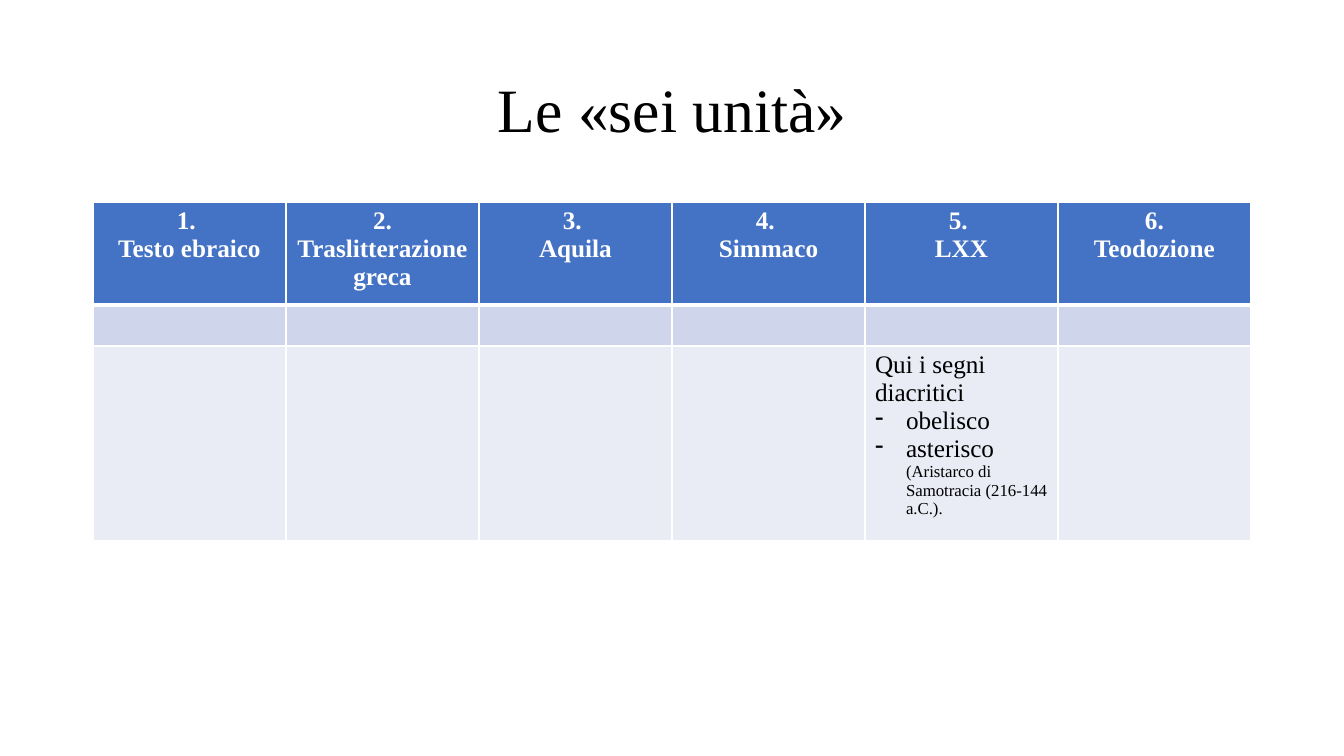
"""Build the slide on the six columns of the Hexapla."""
from lxml import etree
from pptx import Presentation
from pptx import util as u
from pptx.dml.color import RGBColor
from pptx.enum import text
from pptx.oxml.ns import qn

TITLE = "Le «sei unità»"
HEADS = [
    ("1. ", "Testo ebraico"),
    ("2.", "Traslitterazione greca"),
    ("3. ", "Aquila"),
    ("4. ", "Simmaco"),
    ("5. ", "LXX"),
    ("6.", "Teodozione"),
]
INTRO = "Qui i segni diacritici"
SIGNS = ["obelisco", "asterisco "]
NOTE = "(Aristarco di Samotracia (216-144 a.C.)."
NOTE_COL = 4

FONT = "Times New Roman"
COLORS = {"head": "4472C4", "band": "CFD5EA", "pale": "E9EBF5",
          "white": "FFFFFF", "black": "000000"}
FILLS = ["head", "band", "pale"]
WIDE, HIGH = 1344, 756
LEFT, TOP, COL = 93, 202, 193
ROWS = [103, 41, 195]
TITLE_BOX = (93, 40, 1159, 146)
INDENT = 31


def px(n):
    return u.Emu(round(n * 914400 / 100.8))


def style(run, size, color, bold=False):
    font = run.font
    font.name, font.size, font.bold = FONT, u.Pt(size), bold
    font.color.rgb = RGBColor.from_string(COLORS[color])


def border(cell, row):
    props = cell._tc.get_or_add_tcPr()
    widths = {"L": 1, "R": 1, "T": 3 if row == 1 else 1, "B": 3 if row == 0 else 1}
    for i, (side, width) in enumerate(widths.items()):
        line = etree.Element(qn("a:ln" + side), w=str(u.Pt(width)))
        fill = etree.SubElement(line, qn("a:solidFill"))
        etree.SubElement(fill, qn("a:srgbClr"), val=COLORS["white"])
        props.insert(i, line)


def dash(para):
    props = para._p.get_or_add_pPr()
    props.set("marL", str(px(INDENT)))
    props.set("indent", str(-px(INDENT)))
    etree.SubElement(props, qn("a:buFontTx"))
    etree.SubElement(props, qn("a:buChar"), char="-")


def add_title(slide):
    title = slide.shapes.title
    title.left, title.top, title.width, title.height = map(px, TITLE_BOX)
    frame = title.text_frame
    frame.text = TITLE
    frame.vertical_anchor = text.MSO_ANCHOR.MIDDLE
    para = frame.paragraphs[0]
    para.alignment = text.PP_ALIGN.CENTER
    para.line_spacing = 0.9
    style(para.runs[0], 44, "black")


def add_grid(slide):
    count = len(HEADS)
    grid = slide.shapes.add_table(len(ROWS), count, px(LEFT), px(TOP),
                                  px(COL * count), px(sum(ROWS))).table
    for col in grid.columns:
        col.width = px(COL)
    for r, high in enumerate(ROWS):
        grid.rows[r].height = px(high)
        for c in range(count):
            cell = grid.cell(r, c)
            cell.fill.solid()
            cell.fill.fore_color.rgb = RGBColor.from_string(COLORS[FILLS[r]])
            border(cell, r)
    for c, lines in enumerate(HEADS):
        frame = grid.cell(0, c).text_frame
        frame.text = "\n".join(lines)
        for para in frame.paragraphs:
            para.alignment = text.PP_ALIGN.CENTER
            style(para.runs[0], 18, "white", True)
    frame = grid.cell(2, NOTE_COL).text_frame
    frame.text = "\n".join([INTRO] + SIGNS)
    for para in frame.paragraphs:
        style(para.runs[0], 18, "black")
    for para in frame.paragraphs[1:]:
        dash(para)
    note = frame.paragraphs[-1].add_run()
    note.text = NOTE
    style(note, 12, "black")


def main():
    deck = Presentation()
    deck.slide_width, deck.slide_height = px(WIDE), px(HIGH)
    slide = deck.slides.add_slide(deck.slide_layouts[5])
    add_title(slide)
    add_grid(slide)
    deck.save("out.pptx")


if __name__ == "__main__":
    main()
